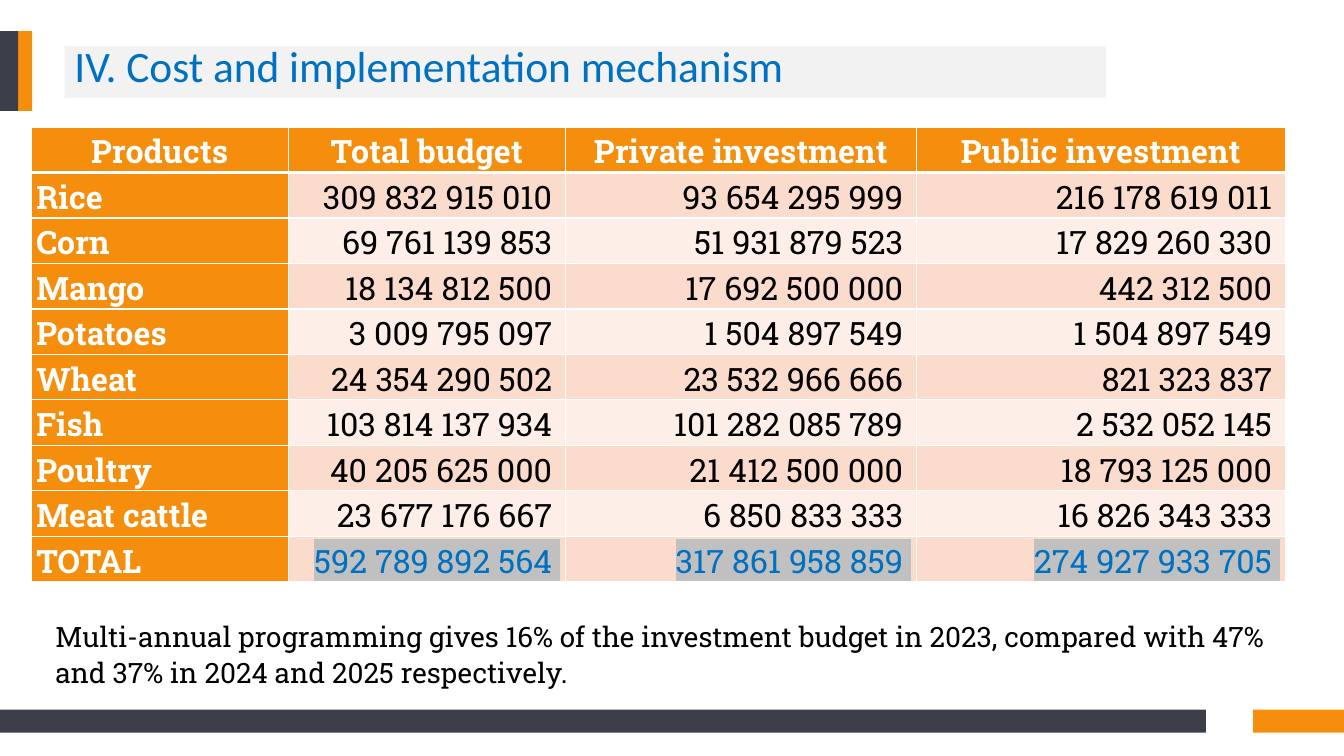
from dataclasses import dataclass
from lxml import etree
from pptx import Presentation
from pptx.dml.color import RGBColor
from pptx.enum.shapes import MSO_SHAPE
from pptx.enum.text import MSO_ANCHOR, PP_ALIGN
from pptx.oxml.ns import qn
from pptx.util import Inches, Pt

RECT = MSO_SHAPE.RECTANGLE
TOP, MID, LOW = MSO_ANCHOR.TOP, MSO_ANCHOR.MIDDLE, MSO_ANCHOR.BOTTOM
LEFT, MIDDLE, RIGHT = PP_ALIGN.LEFT, PP_ALIGN.CENTER, PP_ALIGN.RIGHT

# Content
TITLE = "IV. Cost and implementation mechanism"
NOTE = ("Multi-annual programming gives 16% of the investment budget in 2023, "
        "compared with 47% and 37% in 2024 and 2025 respectively.")
HEADS = ["Products", "Total budget", "Private investment", "Public investment"]
ROWS = [
    ("Rice", "309 832 915 010", "93 654 295 999", "216 178 619 011"),
    ("Corn", "69 761 139 853", "51 931 879 523", "17 829 260 330"),
    ("Mango", "18 134 812 500", "17 692 500 000", "442 312 500"),
    ("Potatoes", "3 009 795 097", "1 504 897 549", "1 504 897 549"),
    ("Wheat", "24 354 290 502", "23 532 966 666", "821 323 837"),
    ("Fish", "103 814 137 934", "101 282 085 789", "2 532 052 145"),
    ("Poultry", "40 205 625 000", "21 412 500 000", "18 793 125 000"),
    ("Meat cattle", "23 677 176 667", "6 850 833 333", "16 826 343 333"),
    ("TOTAL", "592 789 892 564", "317 861 958 859", "274 927 933 705"),
]
WIDTHS = [2.55, 2.75, 3.48, 3.66]
ROW_H = 0.45


@dataclass(frozen=True)
class Theme:
    orange: str = "F48E0C"
    slate: str = "3C3E4A"
    pale: str = "F2F2F2"
    bands: tuple = ("FBDBCC", "FDEEE7")
    blue: str = "0070C0"
    mark: str = "C0C0C0"
    white: str = "FFFFFF"
    black: str = "000000"
    head: str = "Calibri"
    body: str = "Roboto Slab"
    title: int = 31
    cell: int = 23
    note: int = 20


LOOK = Theme()
BARS = [
    (0, 0.31, 0.32, 0.79, LOOK.orange),
    (-0.01, 0.31, 0.19, 0.79, LOOK.slate),
    (12.43, 7.04, 0.9, 0.23, LOOK.orange),
    (-0.02, 7.04, 11.98, 0.23, LOOK.slate),
]


def paint(fill, color):
    fill.solid()
    fill.fore_color.rgb = RGBColor.from_string(color)


def add_bar(slide, x, y, w, h, color):
    bar = slide.shapes.add_shape(RECT, *map(Inches, (x, y, w, h)))
    bar.shadow.inherit = False
    paint(bar.fill, color)
    bar.line.fill.background()
    return bar


def write(frame, text, font, size, color, bold=False, align=LEFT, space=1.07, after=8):
    para = frame.paragraphs[0]
    para.alignment = align
    para.line_spacing = space
    para.space_after = Pt(after)
    run = para.add_run()
    run.text = text
    run.font.name, run.font.size, run.font.bold = font, Pt(size), bold
    run.font.color.rgb = RGBColor.from_string(color)
    return run


def add_mark(run, color):
    mark = etree.Element(qn("a:highlight"))
    etree.SubElement(mark, qn("a:srgbClr"), val=color)
    run.font.fill  # the colour fill must come before the highlight
    run._r.rPr.find(qn("a:solidFill")).addnext(mark)


def add_edges(cell, top, base):
    props = cell._tc.get_or_add_tcPr()
    for i, (side, width) in enumerate(zip("LRTB", (1, 1, top, base))):
        line = etree.Element(qn("a:ln" + side), w=str(Pt(width)))
        fill = etree.SubElement(line, qn("a:solidFill"))
        etree.SubElement(fill, qn("a:srgbClr"), val=LOOK.white)
        props.insert(i, line)


def fill_cell(cell, row, col, text):
    head, label, total = row == 0, col == 0, row == len(ROWS)
    solid = head or label
    cell.margin_left = cell.margin_right = Inches(0.05)
    cell.margin_top = cell.margin_bottom = 0
    cell.vertical_anchor = TOP if head else LOW
    paint(cell.fill, LOOK.orange if solid else LOOK.bands[(row - 1) % 2])
    color = LOOK.white if solid else LOOK.blue if total else LOOK.black
    align = MIDDLE if head else LEFT if label else RIGHT
    run = write(cell.text_frame, text if solid else text + " ",
                LOOK.body, LOOK.cell, color, solid, align)
    if total and not label:
        add_mark(run, LOOK.mark)
    add_edges(cell, 3 if row == 1 else 1, 3 if head else 1)


def add_grid(slide):
    lines = [HEADS, *ROWS]
    table = slide.shapes.add_table(
        len(lines), len(HEADS), Inches(0.31), Inches(1.26),
        Inches(sum(WIDTHS)), Inches(ROW_H * len(lines))).table
    table.first_row = table.horz_banding = False
    for col, width in zip(table.columns, WIDTHS):
        col.width = Inches(width)
    for r, line in enumerate(lines):
        table.rows[r].height = Inches(ROW_H)
        for c, text in enumerate(line):
            fill_cell(table.cell(r, c), r, c, text)


def main():
    deck = Presentation()
    deck.slide_width, deck.slide_height = Inches(13.33), Inches(7.5)
    slide = deck.slides.add_slide(deck.slide_layouts[6])

    # Side and foot bars
    for bar in BARS:
        add_bar(slide, *bar)

    # Budget table
    add_grid(slide)

    # Title band
    band = add_bar(slide, 0.64, 0.46, 10.33, 0.51, LOOK.pale)
    band.text_frame.word_wrap = True
    band.text_frame.vertical_anchor = MID
    write(band.text_frame, TITLE, LOOK.head, LOOK.title, LOOK.blue, space=0.7, after=0)
    band.text_frame.paragraphs[0].space_before = Pt(10)

    # Closing note
    note = slide.shapes.add_textbox(*map(Inches, (0.45, 6.07, 12.3, 0.81)))
    note.text_frame.word_wrap = True
    write(note.text_frame, NOTE, LOOK.body, LOOK.note, LOOK.black)

    deck.save("out.pptx")


if __name__ == "__main__":
    main()
